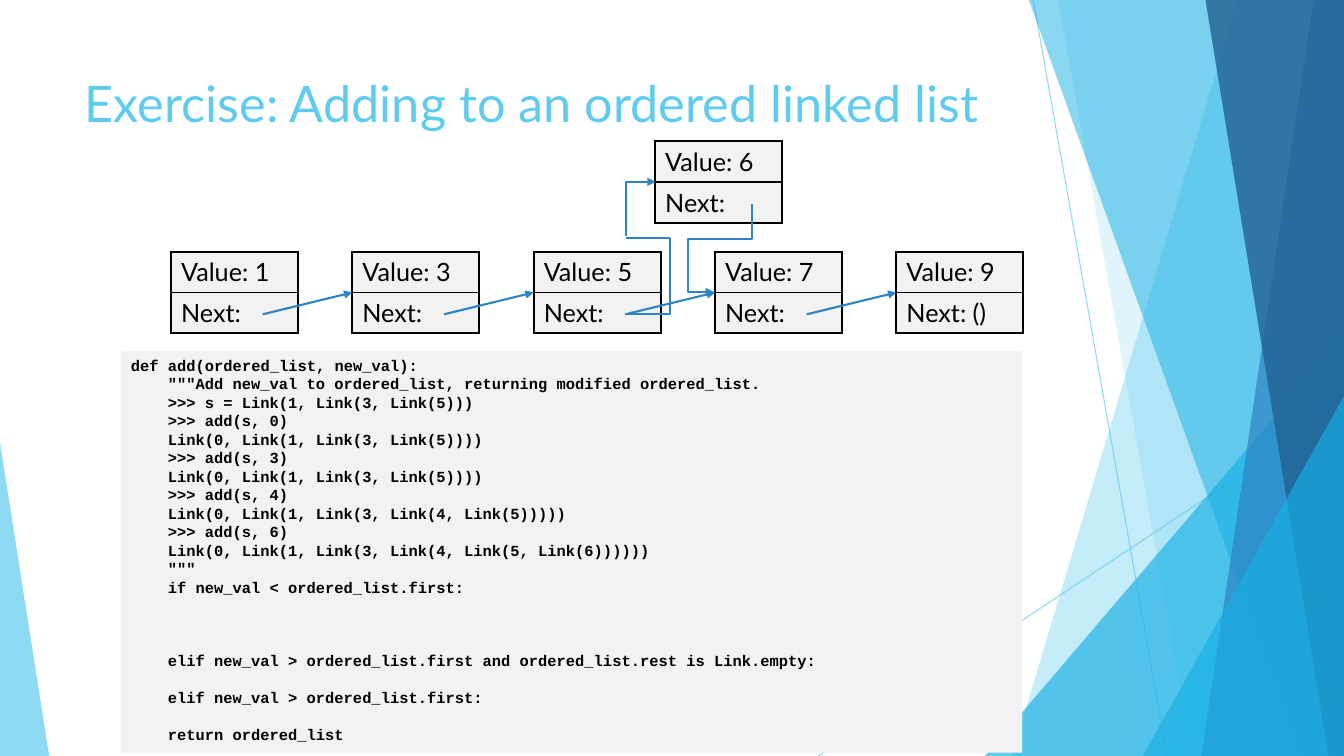
"""Build the slide on adding a value to an ordered linked list."""
from lxml.etree import SubElement
from pptx import Presentation
from pptx.dml.color import RGBColor
from pptx.enum.shapes import MSO_CONNECTOR, MSO_SHAPE
from pptx.enum.text import MSO_ANCHOR, PP_ALIGN
from pptx.oxml.ns import qn
from pptx.util import Cm, Pt

SKY = RGBColor(0x5F, 0xCB, 0xEF)
CYAN = RGBColor(0x17, 0xB0, 0xE4)
BLUE = RGBColor(0x2E, 0x83, 0xC3)
NAVY = RGBColor(0x22, 0x62, 0x92)
BLACK = RGBColor(0, 0, 0)
PALE = RGBColor(0xF2, 0xF2, 0xF2)

WIDTH, HEIGHT = 33.87, 19.05
TITLE = "Exercise: Adding to an ordered linked list"
NODES = [("Value: 1", "Next:"), ("Value: 3", "Next:"), ("Value: 5", "Next:"),
         ("Value: 7", "Next:"), ("Value: 9", "Next: ()")]
NEW_NODE = ("Value: 6", "Next:")

# indent level, blank lines above, text
CODE = [
    (0, 0, "def add(ordered_list, new_val):"),
    (1, 0, '"""Add new_val to ordered_list, returning modified ordered_list.'),
    (1, 0, ">>> s = Link(1, Link(3, Link(5)))"),
    (1, 0, ">>> add(s, 0)"),
    (1, 0, "Link(0, Link(1, Link(3, Link(5))))"),
    (1, 0, ">>> add(s, 3)"),
    (1, 0, "Link(0, Link(1, Link(3, Link(5))))"),
    (1, 0, ">>> add(s, 4)"),
    (1, 0, "Link(0, Link(1, Link(3, Link(4, Link(5)))))"),
    (1, 0, ">>> add(s, 6)"),
    (1, 0, "Link(0, Link(1, Link(3, Link(4, Link(5, Link(6))))))"),
    (1, 0, '"""'),
    (1, 0, "if new_val < ordered_list.first:"),
    (1, 3, "elif new_val > ordered_list.first and ordered_list.rest is Link.empty:"),
    (1, 1, "elif new_val > ordered_list.first:"),
    (1, 1, "return ordered_list"),
]
CODE_LINE = 13.2
CODE_INDENT = 0.93

RAYS = [(26.04, 0, 29.41, HEIGHT), (WIDTH, 10.24, 20.62, HEIGHT)]
BANDS = [("band", 31.19, 25.5, SKY, 36), ("band", 26.67, 30.05, SKY, 20),
         ("corner", 24.82, 8.46, CYAN, 66), ("band", 25.93, 32.79, CYAN, 50),
         ("band", 33.1, 30.28, BLUE, 70), ("band", 30.38, 33.48, NAVY, 80),
         ("corner", 28.8, 9.98, CYAN, 66)]

FIRST_LEFT, PITCH, NODE_TOP = 4.31, 4.57, 6.34
NODE_WIDTH, ROW_HEIGHT = 3.2, 1.03
POINTER_START = 2.31
ELBOWS = [
    ((15.47, 4.9, 1.37, 0.74), "bentConnector2", True, (), True),
    ((17.37, 5.77, 2.21, 0.97), "bentConnector4", False, (39900, 166100), True),
    ((15.37, 6.4, 1.93, 1.12), "bentConnector3", True, (300,), False),
]
JOINING_LINE = (16.89, 5.99, 15.77, 5.99)

deck = Presentation()
deck.slide_width, deck.slide_height = Cm(WIDTH), Cm(HEIGHT)
slide = deck.slides.add_slide(deck.slide_layouts[6])
shapes = slide.shapes


def write(paragraph, text, size=18, font="Lato", color=BLACK, bold=False):
    paragraph.alignment = PP_ALIGN.LEFT
    run = paragraph.add_run()
    run.text = text
    run.font.size, run.font.name, run.font.bold = Pt(size), font, bold
    run.font.color.rgb = color


def set_alpha(element, percent):
    for color in element.iter(qn("a:srgbClr")):
        SubElement(color, qn("a:alpha"), val=str(percent * 1000))


def paint(shape, color, opacity=100):
    shape.shadow.inherit = False
    shape.fill.solid()
    shape.fill.fore_color.rgb = color
    shape.line.fill.background()
    if opacity < 100:
        set_alpha(shape.fill._xPr, opacity)


def draw_line(ends, color=BLUE, width=1.5, arrow=False, kind=MSO_CONNECTOR.STRAIGHT):
    line = shapes.add_connector(kind, *(Cm(end) for end in ends))
    line.line.color.rgb, line.line.width = color, Pt(width)
    properties = line._element.spPr
    if arrow:
        SubElement(properties.find(qn("a:ln")), qn("a:tailEnd"), type="triangle")
    SubElement(properties, qn("a:effectLst"))
    return line


def draw_elbow(box, preset, flipped, bends, arrow):
    left, top, width, height = box
    elbow = draw_line((left, top, left + width, top + height), arrow=arrow,
                      kind=MSO_CONNECTOR.ELBOW)
    properties = elbow._element.spPr
    frame = properties.find(qn("a:xfrm"))
    frame.set("rot", str(90 * 60000))
    if flipped:
        frame.set("flipH", "1")
        frame.set("flipV", "1")
    geometry = properties.find(qn("a:prstGeom"))
    geometry.set("prst", preset)
    guides = geometry.find(qn("a:avLst"))
    for number, bend in enumerate(bends, 1):
        SubElement(guides, qn("a:gd"), name=f"adj{number}", fmla=f"val {bend}")


def draw_triangle(left, top, width, apex, color, opacity):
    triangle = shapes.add_shape(MSO_SHAPE.ISOSCELES_TRIANGLE, Cm(left), Cm(top),
                                Cm(width), Cm(HEIGHT - top))
    triangle.adjustments[0] = apex
    paint(triangle, color, opacity)


def draw_node(labels, left, top):
    node = shapes.add_table(2, 1, Cm(left), Cm(top), Cm(NODE_WIDTH),
                            Cm(2 * ROW_HEIGHT)).table
    node.first_row = node.horz_banding = False
    for row, label in enumerate(labels):
        cell = node.cell(row, 0)
        write(cell.text_frame.paragraphs[0], label)
        borders = cell._tc.get_or_add_tcPr()
        for side in ("lnL", "lnR", "lnT", "lnB"):
            border = SubElement(borders, qn(f"a:{side}"), w=str(Pt(1.5)))
            solid = SubElement(border, qn("a:solidFill"))
            SubElement(solid, qn("a:srgbClr"), val=str(BLACK))
        cell.fill.solid()
        cell.fill.fore_color.rgb = PALE


for ray in RAYS:
    set_alpha(draw_line(ray, SKY, 0.75)._element.spPr, 70)
for kind, start, end, color, opacity in BANDS:
    if kind == "corner":
        draw_triangle(start, end, WIDTH - start, 1, color, opacity)
    else:
        outline = shapes.build_freeform(Cm(start), 0)
        outline.add_line_segments([(Cm(WIDTH), 0), (Cm(WIDTH), Cm(HEIGHT)),
                                   (Cm(end), Cm(HEIGHT))])
        paint(outline.convert_to_shape(), color, opacity)
draw_triangle(0, 11.15, 1.24, 0, SKY, 70)

heading = shapes.add_textbox(Cm(1.88), Cm(1.7), Cm(23.88), Cm(3.66)).text_frame
heading.word_wrap = True
write(heading.paragraphs[0], TITLE, size=36, color=SKY)

lefts = [FIRST_LEFT + PITCH * place for place in range(len(NODES))]
for labels, left in zip(NODES, lefts):
    draw_node(labels, left, NODE_TOP)
draw_node(NEW_NODE, 16.51, 3.56)
for left, following in zip(lefts, lefts[1:]):
    draw_line((left + POINTER_START, 7.92, following, NODE_TOP + ROW_HEIGHT), arrow=True)
for elbow in ELBOWS:
    draw_elbow(*elbow)
draw_line(JOINING_LINE)

listing = shapes.add_shape(MSO_SHAPE.RECTANGLE, Cm(3.05), Cm(8.84), Cm(22.71), Cm(10.13))
paint(listing, PALE)
listing.text_frame.word_wrap = True
listing.text_frame.vertical_anchor = MSO_ANCHOR.TOP
for number, (level, blanks, text) in enumerate(CODE):
    paragraphs = listing.text_frame.paragraphs
    paragraph = listing.text_frame.add_paragraph() if number else paragraphs[0]
    write(paragraph, text, size=11, font="Courier New", bold=True)
    paragraph.line_spacing = Pt(CODE_LINE)
    paragraph.space_before = Pt(CODE_LINE * blanks)
    paragraph._p.get_or_add_pPr().set("marL", str(Cm(CODE_INDENT * level)))

deck.save("out.pptx")
